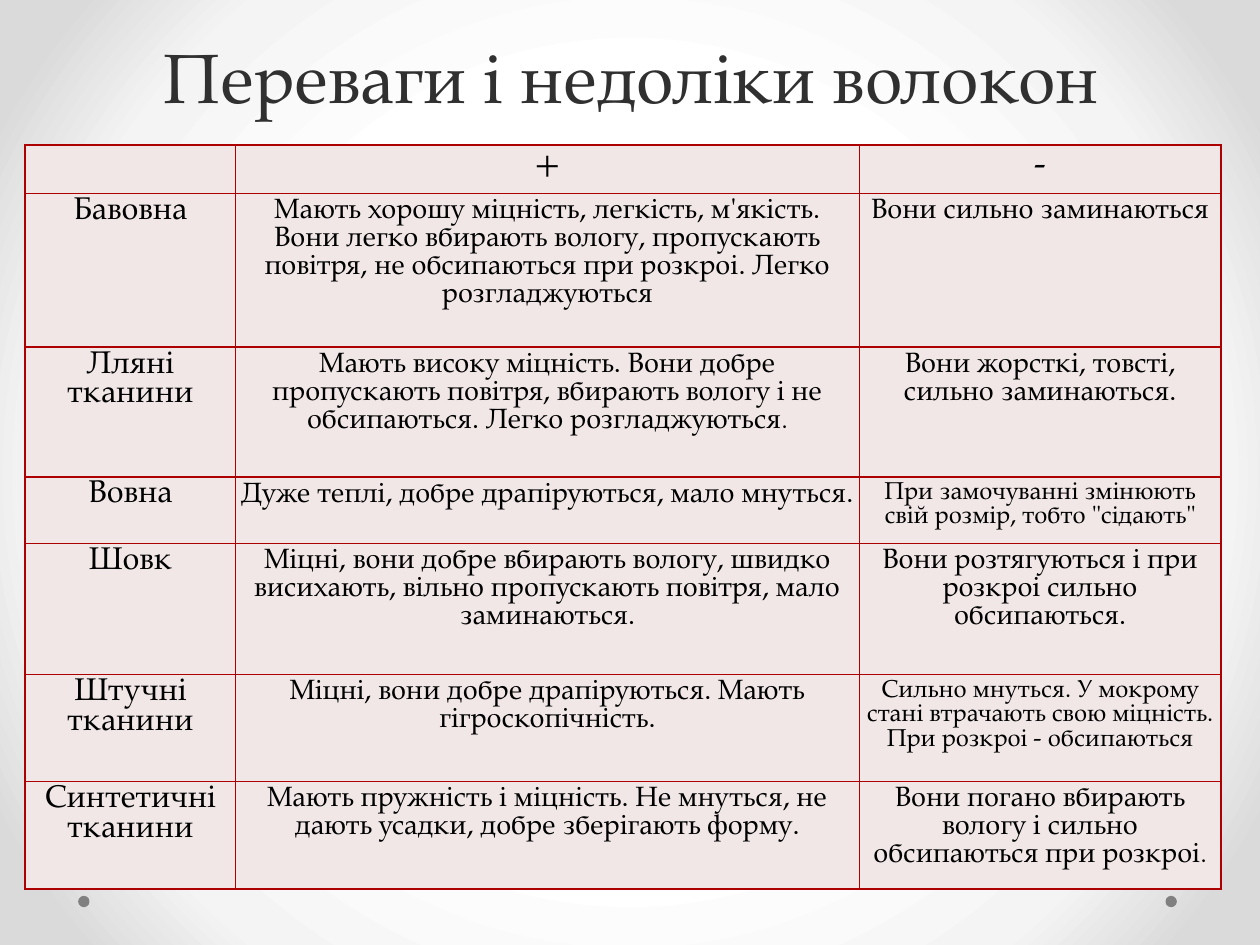
import pptx
import pptx.util
import pptx.enum.text
import pptx.enum.shapes
import pptx.dml.color
import pptx.oxml
import pptx.oxml.ns

INK = {"title": "303030", "text": "000000", "cell": "F1E7E7", "line": "AD0101", "dot": "808080"}
GLOW = {0: "FFFFFF", 50: "FFFFFF", 76: "F4F4F4", 92: "DADADA", 100: "DADADA"}
FONT = "TeX Gyre Pagella"
WIDE, HIGH = 10, 7.5
COLS = [1.67, 4.95, 2.87]
ROWS = [0.37, 1.22, 1.03, 0.53, 1.04, 0.85, 0.85]
LEAD = {14: 14, 16: 16, 18: 17, 20: 20, 40: 58}
SIZES = {0: [18, 20, 20], 3: [18, 16, 14], 5: [18, 16, 14]}
SMALL = {(2, 1), (6, 2)}
FIBRES = [
    ["", "+", "-"],
    ["Бавовна", "Мають хорошу міцність, легкість, м'якість. Вони легко вбирають вологу, "
     "пропускають повітря, не обсипаються при розкроі. Легко розгладжуються",
     "Вони сильно заминаються"],
    ["Лляні тканини", "Мають високу міцність. Вони добре пропускають повітря, "
     "вбирають вологу і не обсипаються. Легко розгладжуються",
     "Вони жорсткі, товсті, сильно заминаються."],
    ["Вовна", "Дуже теплі, добре драпіруються, мало мнуться.",
     "При замочуванні змінюють свій розмір, тобто \"сідають\""],
    ["Шовк", "Міцні, вони добре вбирають вологу, швидко висихають, "
     "вільно пропускають повітря, мало заминаються.",
     "Вони розтягуються і при розкроі сильно обсипаються."],
    ["Штучні тканини", "Міцні, вони добре драпіруються. Мають гігроскопічність.",
     "Сильно мнуться. У мокрому стані втрачають свою міцність. При розкроі - обсипаються"],
    ["Синтетичні тканини", "Мають пружність і міцність. Не мнуться, не дають усадки, "
     "добре зберігають форму.",
     "Вони погано вбирають вологу і сильно обсипаються при розкроі"],
]


def inch(*nums):
    """Turn numbers into inch lengths."""
    return [pptx.util.Inches(num) for num in nums]


def tint(name):
    """Look up a named colour."""
    return pptx.dml.color.RGBColor.from_string(INK[name])


def write(frame, words, size=16, ink="text", tail=""):
    """Write one centred paragraph, with an optional smaller tail."""
    frame.word_wrap = True
    para = frame.paragraphs[0]
    para.alignment = pptx.enum.text.PP_ALIGN.CENTER
    para.line_spacing = pptx.util.Pt(LEAD[size])
    para.space_before = pptx.util.Pt(0)
    para.font.size = pptx.util.Pt(size)
    for part, high in ((words, size), (tail, 14)):
        if part:
            run = para.add_run()
            run.text = part
            run.font.name = FONT
            run.font.size = pptx.util.Pt(high)
            run.font.color.rgb = tint(ink)


def glow(slide):
    """Fill the background with a round gradient."""
    slide.background.fill.gradient()
    old = slide.element.find(".//" + pptx.oxml.ns.qn("a:gradFill"))
    stops = "".join(f'<a:gs pos="{pos * 1000}"><a:srgbClr val="{hue}"/></a:gs>'
                    for pos, hue in GLOW.items())
    new = pptx.oxml.parse_xml(
        f'<a:gradFill {pptx.oxml.ns.nsdecls("a")} rotWithShape="1"><a:gsLst>{stops}</a:gsLst>'
        '<a:path path="circle"><a:fillToRect l="50000" t="50000" r="50000" b="50000"/>'
        '</a:path></a:gradFill>')
    old.getparent().replace(old, new)


def dots(slide, left, top, width, size):
    """Place a dot at each end of a strip."""
    for x in (left, left + width - size):
        dot = slide.shapes.add_shape(pptx.enum.shapes.MSO_SHAPE.OVAL, *inch(x, top, size, size))
        dot.shadow.inherit = False
        dot.fill.solid()
        dot.fill.fore_color.rgb = tint("dot")
        dot.line.fill.background()


def head(slide, left, top, width, height):
    """Set the title in its box."""
    title = slide.shapes.title
    title.left, title.top, title.width, title.height = inch(left, top, width, height)
    frame = title.text_frame
    frame.auto_size = pptx.enum.text.MSO_AUTO_SIZE.NONE
    frame.vertical_anchor = pptx.enum.text.MSO_ANCHOR.BOTTOM
    write(frame, "Переваги і недоліки волокон", size=40, ink="title")


def style(cell):
    """Give a cell its margins, borders and fill."""
    cell.margin_left = cell.margin_right = cell.margin_top = cell.margin_bottom = inch(0.04)[0]
    props = cell._tc.get_or_add_tcPr()
    for side in "LRTB":
        props.append(pptx.oxml.parse_xml(
            f'<a:ln{side} {pptx.oxml.ns.nsdecls("a")} w="12700"><a:solidFill>'
            f'<a:srgbClr val="{INK["line"]}"/></a:solidFill></a:ln{side}>'))
    cell.fill.solid()
    cell.fill.fore_color.rgb = tint("cell")


def grid(slide, left, top, width, height):
    """Build the table of fibres, sharing out the box."""
    table = slide.shapes.add_table(len(ROWS), len(COLS), *inch(left, top, width, height)).table
    table.first_row = table.horz_banding = False
    for col, share in zip(table.columns, COLS):
        col.width = inch(width * share / sum(COLS))[0]
    for row, share in zip(table.rows, ROWS):
        row.height = inch(height * share / sum(ROWS))[0]
    for r, line in enumerate(FIBRES):
        for c, words in enumerate(line):
            cell = table.cell(r, c)
            style(cell)
            size = SIZES.get(r, [18, 16, 16])[c]
            write(cell.text_frame, words, size=size, tail="." if (r, c) in SMALL else "")


def main():
    """Build and save the slide."""
    deck = pptx.Presentation()
    deck.slide_width, deck.slide_height = inch(WIDE, HIGH)
    slide = deck.slides.add_slide(deck.slide_layouts[5])
    glow(slide)
    dots(slide, 0.62, 7.11, 8.72, 0.09)
    head(slide, 0.51, -0.27, 0.9 * WIDE, HIGH / 6)
    grid(slide, 0.2, 1.15, sum(COLS), sum(ROWS))
    deck.save("out.pptx")


if __name__ == "__main__":
    main()
